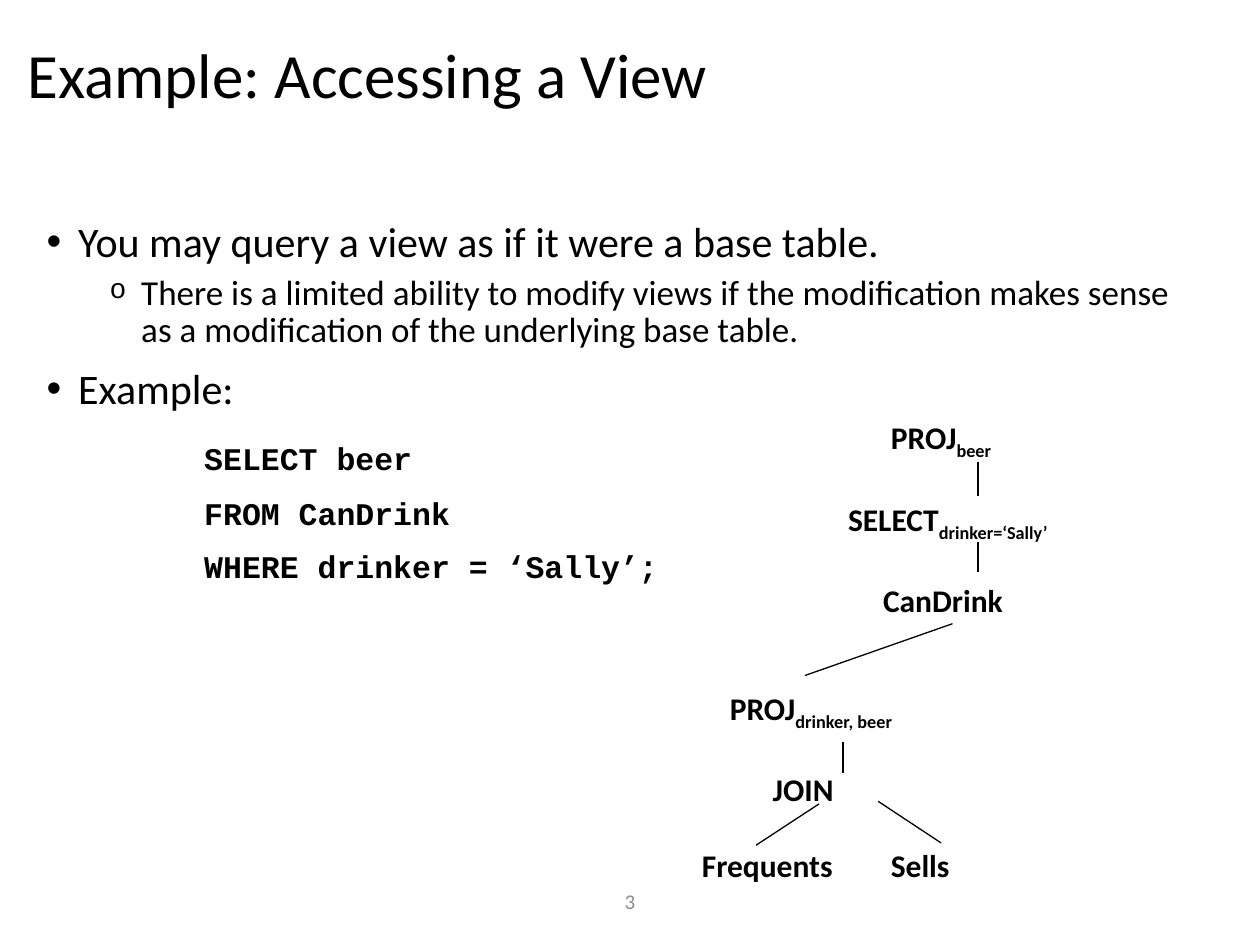
from collections import namedtuple
from dataclasses import dataclass

from lxml.etree import SubElement
from pptx import Presentation
from pptx.dml.color import RGBColor
from pptx.enum.shapes import MSO_CONNECTOR as Connector
from pptx.enum.text import MSO_ANCHOR as Anchor, MSO_AUTO_SIZE as AutoSize, PP_ALIGN as Align
from pptx.oxml.ns import qn
from pptx.util import Pt

Box = namedtuple("Box", "left top width height")
Node = namedtuple("Node", "name subscript indent")


@dataclass(frozen=True)
class Theme:
    """Fonts, colours and type sizes of the slide."""
    font: str = "Calibri"
    code_font: str = "Courier New"
    ink: RGBColor = RGBColor(0, 0, 0)
    muted: RGBColor = RGBColor(0x8C, 0x8C, 0x8C)
    title: int = 36
    bullet: int = 24
    sub_bullet: int = 20
    label: int = 18
    number: int = 12
    line: float = 0.75


THEME = Theme()


def add_text(paragraph, text, size=THEME.label, font=THEME.font, color=THEME.ink,
             bold=False, subscript=False):
    """Append a formatted run to a paragraph."""
    run = paragraph.add_run()
    run.text = text
    run.font.size = Pt(size)
    run.font.name = font
    run.font.bold = bold
    run.font.color.rgb = color
    if subscript:
        run.font._element.set("baseline", "-25000")


def place(shape, box, anchor=Anchor.TOP):
    """Move a shape to its box and prepare its text frame."""
    shape.left, shape.top, shape.width, shape.height = map(Pt, box)
    frame = shape.text_frame
    frame.word_wrap = True
    frame.auto_size = AutoSize.NONE
    frame.vertical_anchor = anchor
    return frame


def next_paragraph(frame, index):
    """Return the first paragraph of a frame, or a new one after it."""
    return frame.add_paragraph() if index else frame.paragraphs[0]


def format_paragraph(paragraph, margin=0, hanging=0, before=0, spacing=1.0,
                     bullet=None, bullet_font="Arial", bullet_size=100, tab=None):
    """Set the indents, spacing, bullet and tab stop of a paragraph."""
    paragraph.alignment = Align.LEFT
    paragraph.line_spacing = spacing
    paragraph.space_before = Pt(before)
    paragraph.space_after = Pt(0)
    properties = paragraph._p.get_or_add_pPr()
    properties.set("marL", str(Pt(margin)))
    properties.set("indent", str(Pt(-hanging)))
    if bullet:
        SubElement(properties, qn("a:buSzPct"), val=str(bullet_size * 1000))
        SubElement(properties, qn("a:buFont"), typeface=bullet_font)
        SubElement(properties, qn("a:buChar"), char=bullet)
    else:
        SubElement(properties, qn("a:buNone"))
    if tab:
        tabs = SubElement(properties, qn("a:tabLst"))
        SubElement(tabs, qn("a:tab"), pos=str(Pt(tab)), algn="l")


def fill_title(slide, box, text):
    """Place the slide title."""
    paragraph = place(slide.shapes.title, box, Anchor.MIDDLE).paragraphs[0]
    format_paragraph(paragraph, spacing=0.9)
    add_text(paragraph, text, size=THEME.title)


def fill_body(slide, box):
    """Place the bullets and the query below them."""
    bullet = dict(margin=18, hanging=18, before=10, bullet="•")
    sub_bullet = dict(margin=54, hanging=18, before=5, bullet="o",
                      bullet_font=THEME.code_font, bullet_size=80)
    code = dict(font=THEME.code_font, bold=True)
    rows = [
        ("You may query a view as if it were a base table.", bullet, dict(size=THEME.bullet)),
        ("There is a limited ability to modify views if the modification makes sense "
         "as a modification of the underlying base table.",
         sub_bullet, dict(size=THEME.sub_bullet)),
        ("Example:", bullet, dict(size=THEME.bullet)),
        ("SELECT beer", dict(margin=90, before=17), code),
        ("FROM CanDrink", dict(margin=90, before=12), code),
        ("WHERE drinker = ‘Sally’;", dict(margin=90, before=11), code),
    ]
    frame = place(slide.placeholders[1], box)
    for index, (text, layout, style) in enumerate(rows):
        paragraph = next_paragraph(frame, index)
        paragraph.level = 1 if layout is sub_bullet else 0
        format_paragraph(paragraph, spacing=0.9, **layout)
        add_text(paragraph, text, **style)


def add_tree(slide, box, nodes, branches):
    """Group a column of operators with branches measured from the box corner."""
    group = slide.shapes.add_group_shape()
    frame = place(group.shapes.add_textbox(*map(Pt, box)), box)
    for index, node in enumerate(nodes):
        paragraph = next_paragraph(frame, index)
        format_paragraph(paragraph, margin=node.indent, before=22 if index else 0, tab=144)
        add_text(paragraph, node.name, bold=True)
        if node.subscript:
            add_text(paragraph, node.subscript, bold=True, subscript=True)
    for x1, y1, x2, y2 in branches:
        line = group.shapes.add_connector(
            Connector.STRAIGHT, Pt(box.left + x1), Pt(box.top + y1),
            Pt(box.left + x2), Pt(box.top + y2))
        line.line.color.rgb = THEME.ink
        line.line.width = Pt(THEME.line)
        SubElement(line._element.spPr, qn("a:effectLst"))


def add_slide_number(slide, box, text):
    """Place the slide number at the foot."""
    frame = place(slide.shapes.add_textbox(*map(Pt, box)), box, Anchor.MIDDLE)
    paragraph = frame.paragraphs[0]
    paragraph.alignment = Align.CENTER
    add_text(paragraph, text, size=THEME.number, color=THEME.muted)


def main():
    """Build the slide and save it."""
    presentation = Presentation()
    presentation.slide_width, presentation.slide_height = Pt(720), Pt(540)
    slide = presentation.slides.add_slide(presentation.slide_layouts[1])
    add_slide_number(slide, Box(238.5, 500.5, 243, 28.75), "3")
    fill_title(slide, Box(8.5, 6, 703, 77), "Example: Accessing a View")
    fill_body(slide, Box(19.5, 122.5, 675, 348))
    add_tree(
        slide, Box(477.5, 235.5, 137.5, 116.5),
        [Node("PROJ", "beer", 24.5), Node("SELECT", "drinker=‘Sally’", 0),
         Node("CanDrink", "", 20)],
        [(81.3, 28.8, 81.3, 48.2), (81.3, 74.2, 81.3, 91.4)])
    add_tree(
        slide, Box(394, 390, 199.5, 116.5),
        [Node("PROJ", "drinker, beer", 16), Node("JOIN", "", 40.5),
         Node("Frequents\tSells", "", 0)],
        [(74, 69.4, 38, 93), (107.8, 67.9, 143.8, 91.7),
         (87.7, 34, 87.7, 52), (66, -4, 150.3, -33.6)])
    presentation.save("out.pptx")


if __name__ == "__main__":
    main()
